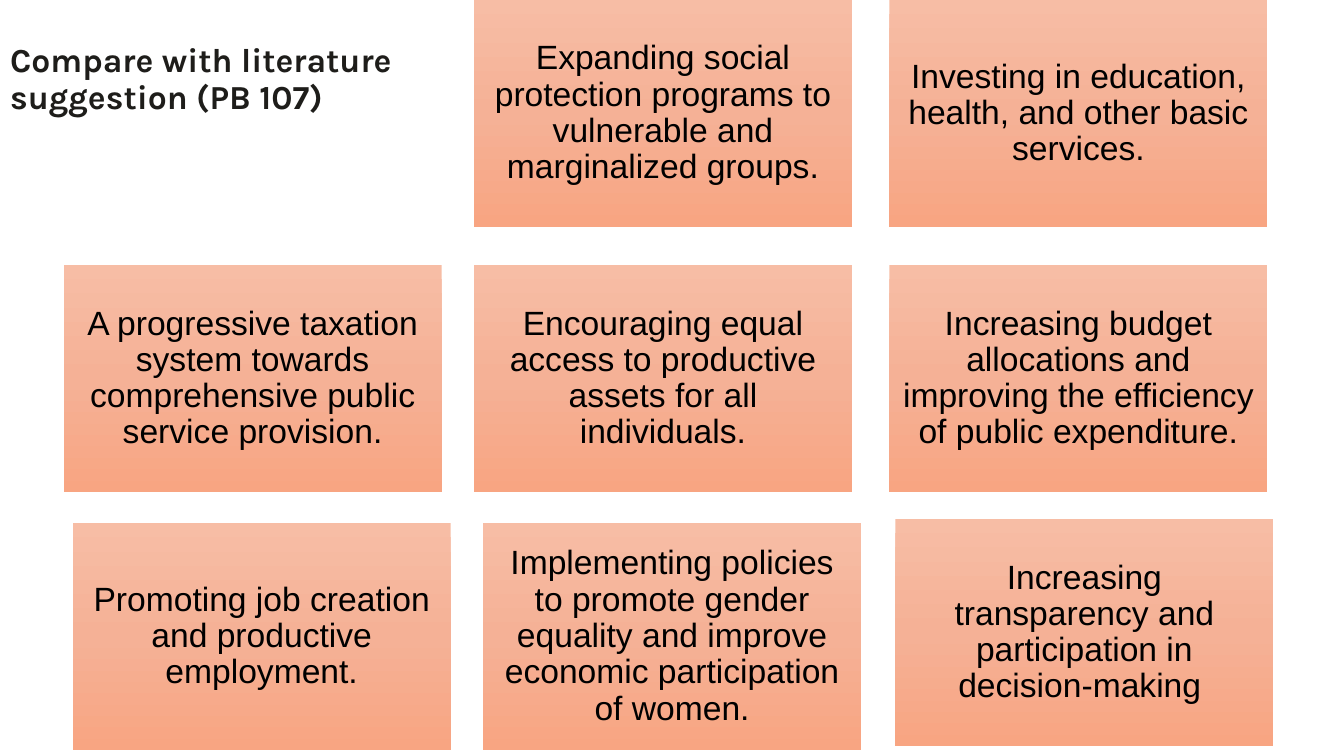
from copy import deepcopy
from dataclasses import dataclass

from pptx import Presentation
from pptx.dml import color
from pptx.enum import shapes, text
from pptx.oxml import ns
from pptx.util import Inches, Pt

CARD_WIDTH, CARD_HEIGHT = 3.75, 2.25
GRADIENT = ("F7BDA5", "F5B196", "F8A582")


@dataclass
class Card:
    left: float
    top: float
    wording: str


CARDS = [
    Card(4.7, 0, "Expanding social protection programs to vulnerable and marginalized groups."),
    Card(8.82, 0, "Investing in education, health, and other basic services."),
    Card(0.63, 2.63, "A progressive taxation system towards comprehensive public service provision."),
    Card(4.7, 2.63, "Encouraging equal access to productive assets for all individuals."),
    Card(8.82, 2.63, "Increasing budget allocations and improving the efficiency of public expenditure."),
    Card(0.72, 5.19, "Promoting job creation and productive employment."),
    Card(4.79, 5.19, "Implementing policies to promote gender equality and improve economic participation of women."),
    Card(8.88, 5.15, "Increasing transparency and participation in decision-making "),
]


def rgb(value: str) -> color.RGBColor:
    return color.RGBColor.from_string(value)


def write_text(shape, wording: str, *, font: str, hex_color: str, align, size: float = 24,
               bold: bool = False, margin: float = 0.1, margin_vertical: float = 0.1) -> None:
    frame = shape.text_frame
    frame.word_wrap = True
    frame.auto_size = text.MSO_AUTO_SIZE.NONE
    frame.vertical_anchor = text.MSO_ANCHOR.MIDDLE
    frame.margin_left = frame.margin_right = Inches(margin)
    frame.margin_top = frame.margin_bottom = Inches(margin_vertical)
    paragraph = frame.paragraphs[0]
    paragraph.text = wording
    paragraph.alignment = align
    paragraph.line_spacing = 0.9
    for run in paragraph.runs:
        run.font.name = font
        run.font.size = Pt(size)
        run.font.bold = bold
        run.font.color.rgb = rgb(hex_color)
    for line_break in paragraph._p.findall(ns.qn("a:br")):
        line_break.append(deepcopy(paragraph.runs[0]._r.rPr))


def fill_gradient(shape, hex_colors: tuple[str, ...]) -> None:
    shape.fill.gradient()
    shape.fill.gradient_angle = 270
    stop_list = shape._element.spPr.find(ns.qn("a:gradFill")).find(ns.qn("a:gsLst"))
    stop_list.insert(1, deepcopy(stop_list[0]))
    stops = shape.fill.gradient_stops
    for index, (stop, hex_color) in enumerate(zip(stops, hex_colors)):
        stop.position = index / (len(hex_colors) - 1)
        stop.color.rgb = rgb(hex_color)


def draw_card(slide, card: Card) -> None:
    shape = slide.shapes.add_shape(
        shapes.MSO_SHAPE.RECTANGLE, Inches(card.left), Inches(card.top),
        Inches(CARD_WIDTH), Inches(CARD_HEIGHT))
    shape.shadow.inherit = False
    shape.line.fill.background()
    fill_gradient(shape, GRADIENT)
    write_text(shape, card.wording, font="Arial", hex_color="000000", align=text.PP_ALIGN.CENTER)


def main() -> None:
    presentation = Presentation()
    presentation.slide_width, presentation.slide_height = Inches(13.33), Inches(7.5)
    slide = presentation.slides.add_slide(presentation.slide_layouts.get_by_name("Title Only"))
    title = slide.shapes.title
    title.left, title.top, title.width, title.height = map(Inches, (0, 0.07, 5.91, 1.45))
    write_text(title, "Compare with literature \vsuggestion (PB 107)", font="Karla",
               hex_color="1E1D1A", align=text.PP_ALIGN.LEFT, bold=True, margin_vertical=0.05)
    for card in CARDS:
        draw_card(slide, card)
    presentation.save("out.pptx")


if __name__ == "__main__":
    main()
